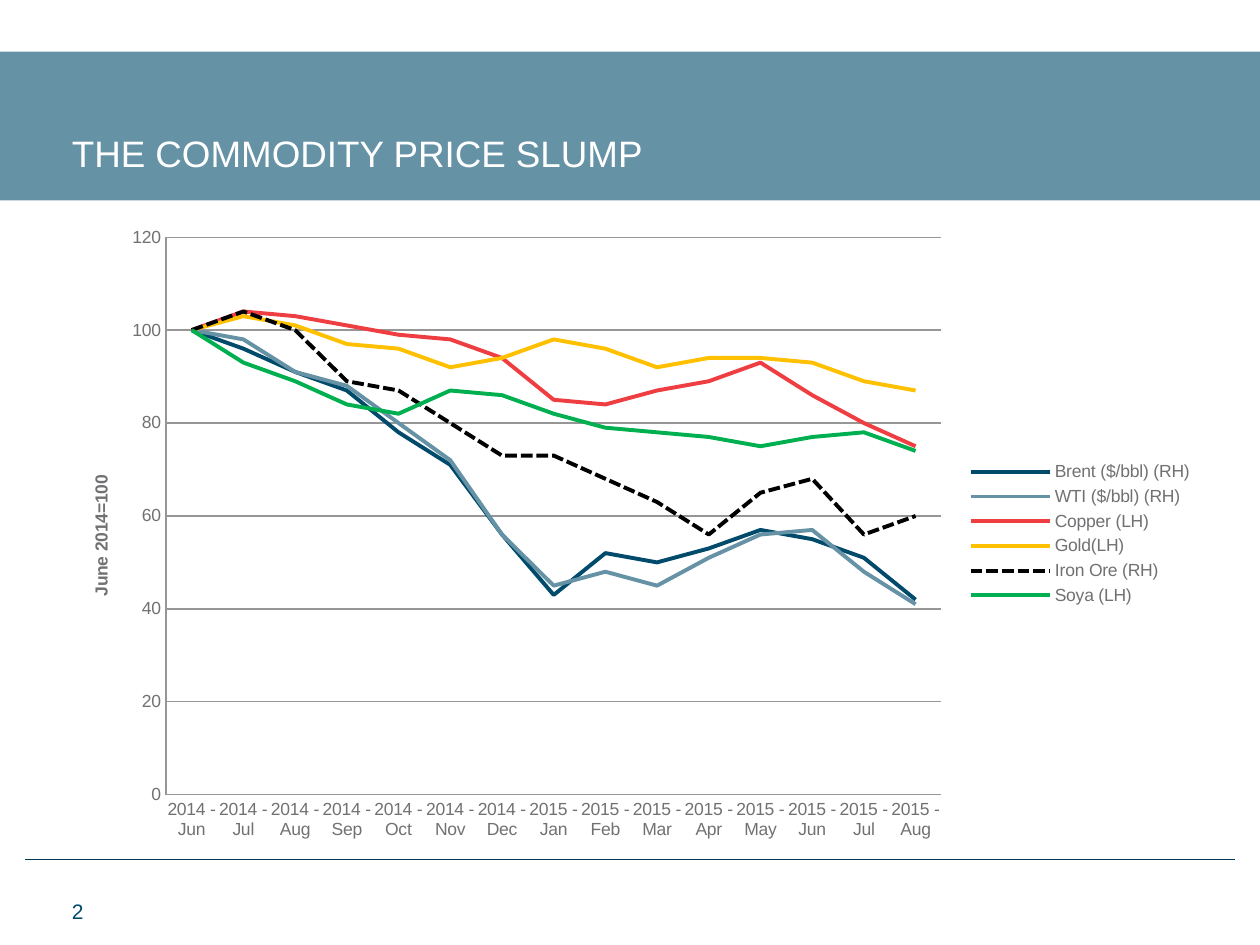
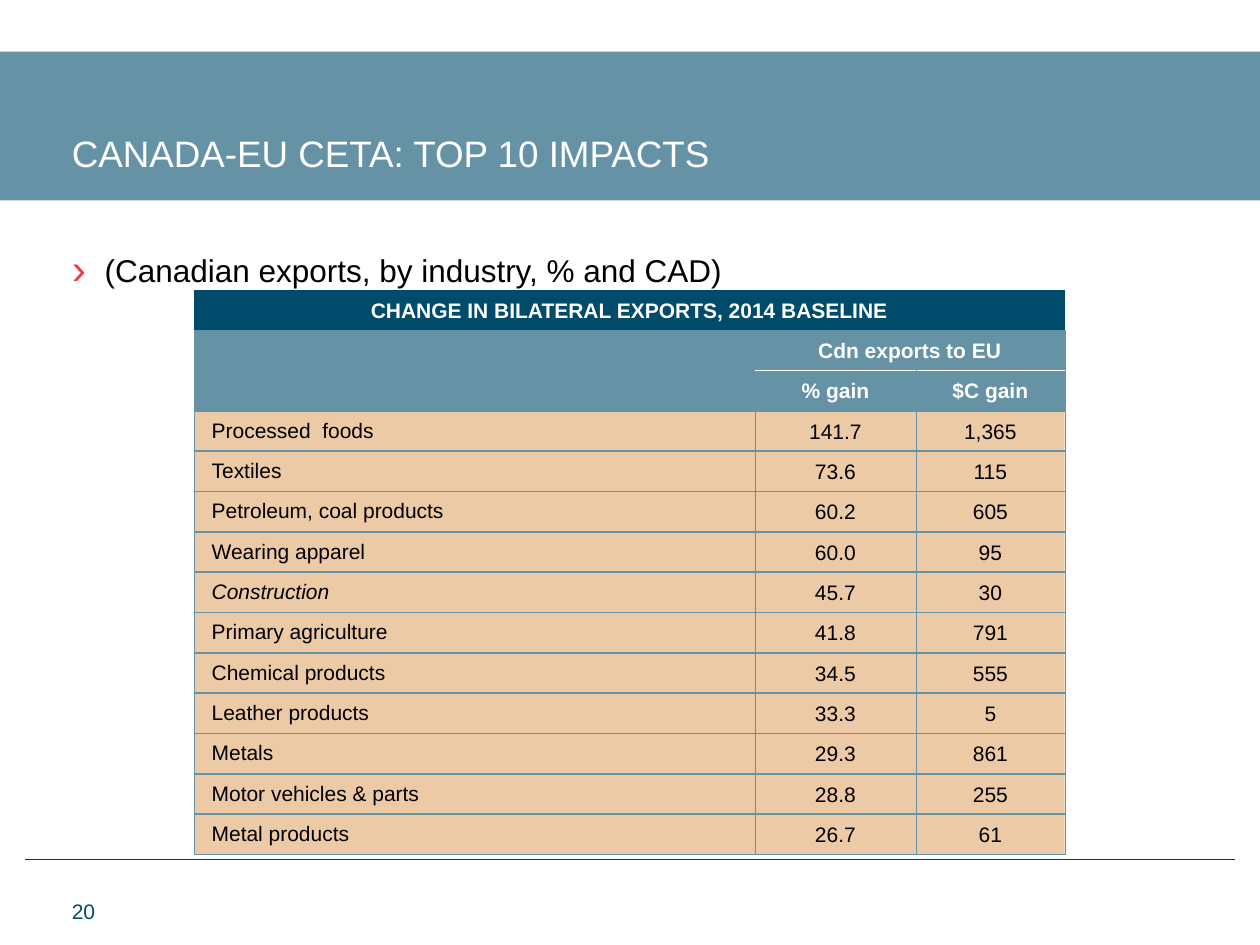
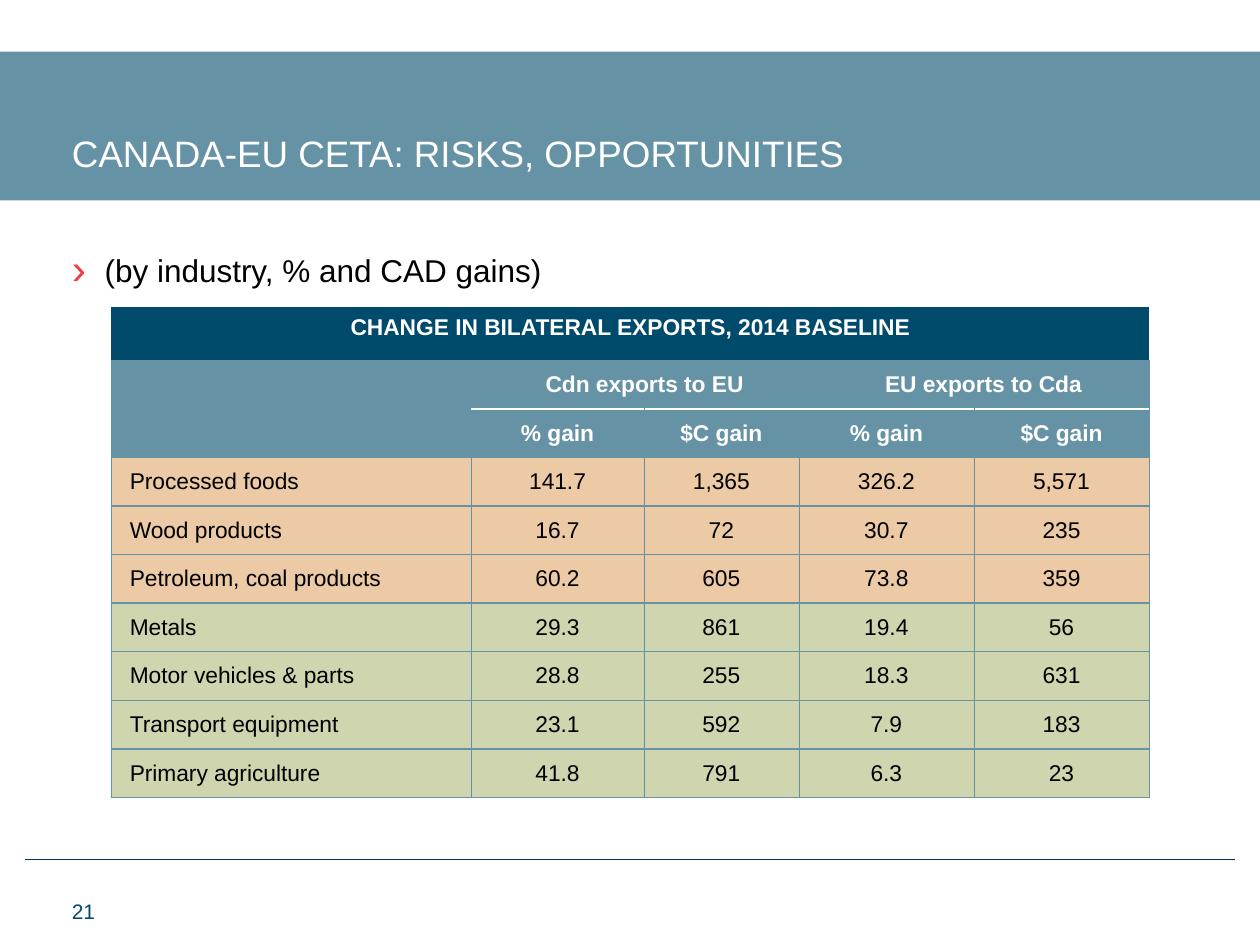
from dataclasses import dataclass

import pptx
import pptx.chart.data
import pptx.dml.color
import pptx.enum.chart
import pptx.enum.dml
import pptx.enum.shapes
import pptx.enum.text
import pptx.oxml
import pptx.oxml.ns
import pptx.util
from lxml import etree

EMU_PER_PX = 9144
TITLE_ONLY, TITLE_AND_CONTENT = 5, 1
qn = pptx.oxml.ns.qn
Anchor = pptx.enum.text.MSO_ANCHOR
Align = pptx.enum.text.PP_ALIGN


@dataclass(frozen=True)
class Theme:
    font: str = "Arial"
    navy: str = "004A6B"
    steel: str = "6692A6"
    rule: str = "003A52"
    red: str = "EF3E42"
    gold: str = "FFC000"
    green: str = "00B050"
    orange: str = "D47B22"
    olive: str = "879637"
    grey: str = "717073"
    grid: str = "969696"
    black: str = "000000"
    white: str = "FFFFFF"
    title_size: int = 21
    body_size: int = 18
    page_size: int = 12
    chart_size: int = 10


THEME = Theme()


@dataclass(frozen=True)
class Box:
    left: int
    top: int
    width: int
    height: int

    def emu(self) -> tuple:
        return tuple(px(n) for n in (self.left, self.top, self.width, self.height))


@dataclass(frozen=True)
class Series:
    name: str
    color: str
    values: tuple
    dashed: bool = False


@dataclass(frozen=True)
class Industry:
    name: str
    gains: tuple
    color: str = THEME.orange
    italic: bool = False


@dataclass(frozen=True)
class GainTable:
    box: Box
    columns: tuple
    groups: tuple
    industries: tuple
    title_height: int
    size: int
    inset: int
    group_indent: int = 0
    title_anchor: Anchor = Anchor.BOTTOM
    value_anchor: Anchor = Anchor.BOTTOM
    merge_corner: bool = False


@dataclass(frozen=True)
class CellStyle:
    fill: str
    borders: dict
    color: str = THEME.white
    bold: bool = True
    italic: bool = False
    alpha: int = 100
    align: Align = Align.CENTER
    anchor: Anchor = Anchor.MIDDLE
    indent: int = 0


BAND = Box(0, 41, 1000, 118)
TITLE = Box(57, 104, 900, 52)
BODY = Box(57, 199, 682, 48)
PAGE_NUMBER = Box(57, 703, 186, 40)
CHART = Box(45, 170, 912, 507)
RULE_LEFT, RULE_RIGHT, RULE_TOP = 20, 980, 682

SIDES = {"l": (THEME.steel, 0.25), "r": (THEME.steel, 0.25)}
GRID = {**SIDES, "t": (THEME.steel, 1), "b": (THEME.steel, 1)}
WHITE_LINE = (THEME.white, 1)

MONTHS = (
    [f"2014 - {month}" for month in "Jun Jul Aug Sep Oct Nov Dec".split()]
    + [f"2015 - {month}" for month in "Jan Feb Mar Apr May Jun Jul Aug".split()]
)
PRICES = (
    Series("Brent ($/bbl) (RH)", THEME.navy,
           (100, 96, 91, 87, 78, 71, 56, 43, 52, 50, 53, 57, 55, 51, 42)),
    Series("WTI ($/bbl) (RH)", THEME.steel,
           (100, 98, 91, 88, 80, 72, 56, 45, 48, 45, 51, 56, 57, 48, 41)),
    Series("Copper (LH)", THEME.red,
           (100, 104, 103, 101, 99, 98, 94, 85, 84, 87, 89, 93, 86, 80, 75)),
    Series("Gold(LH)", THEME.gold,
           (100, 103, 101, 97, 96, 92, 94, 98, 96, 92, 94, 94, 93, 89, 87)),
    Series("Iron Ore (RH)", THEME.black,
           (100, 104, 100, 89, 87, 80, 73, 73, 68, 63, 56, 65, 68, 56, 60), dashed=True),
    Series("Soya (LH)", THEME.green,
           (100, 93, 89, 84, 82, 87, 86, 82, 79, 78, 77, 75, 77, 78, 74)),
)
TOP_IMPACTS = GainTable(
    box=Box(154, 230, 691, 442),
    columns=(445, 128, 118),
    groups=("Cdn exports to EU",),
    industries=(
        Industry("Processed  foods", ("141.7", "1,365")),
        Industry("Textiles", ("73.6", "115")),
        Industry("Petroleum, coal products", ("60.2", "605")),
        Industry("Wearing apparel", ("60.0", "95")),
        Industry("Construction", ("45.7", "30"), italic=True),
        Industry("Primary agriculture", ("41.8", "791")),
        Industry("Chemical products", ("34.5", "555")),
        Industry("Leather products", ("33.3", "5")),
        Industry("Metals", ("29.3", "861")),
        Industry("Motor vehicles & parts", ("28.8", "255")),
        Industry("Metal products", ("26.7", "61")),
    ),
    title_height=32, size=12, inset=14, merge_corner=True,
)
RISKS = GainTable(
    box=Box(88, 244, 824, 389),
    columns=(286, 137, 123, 139, 139),
    groups=("Cdn exports to EU", "EU exports to Cda"),
    industries=(
        Industry("Processed foods", ("141.7", "1,365", "326.2", "5,571")),
        Industry("Wood products", ("16.7", "72", "30.7", "235")),
        Industry("Petroleum, coal products", ("60.2", "605", "73.8", "359")),
        Industry("Metals", ("29.3", "861", "19.4", "56"), THEME.olive),
        Industry("Motor vehicles & parts", ("28.8", "255", "18.3", "631"), THEME.olive),
        Industry("Transport equipment", ("23.1", "592", "7.9", "183"), THEME.olive),
        Industry("Primary agriculture", ("41.8", "791", "6.3", "23"), THEME.olive),
    ),
    title_height=42, size=13, inset=15, group_indent=15,
    title_anchor=Anchor.TOP, value_anchor=Anchor.MIDDLE,
)


def px(length: float) -> pptx.util.Emu:
    return pptx.util.Emu(round(length * EMU_PER_PX))


def rgb(color: str) -> pptx.dml.color.RGBColor:
    return pptx.dml.color.RGBColor.from_string(color)


def set_font(font, size: int, color: str, bold: bool = False, italic: bool = False) -> None:
    font.name, font.size = THEME.font, pptx.util.Pt(size)
    font.color.rgb = rgb(color)
    font.bold, font.italic = bold, italic


def set_line(line, color: str, width: float) -> None:
    line.color.rgb = rgb(color)
    line.width = pptx.util.Pt(width)


def furnish_master(deck) -> None:
    """Put the title band and the footer rule on the master, behind its placeholders."""
    shapes = deck.slides[0].shapes
    band = shapes.add_shape(pptx.enum.shapes.MSO_SHAPE.RECTANGLE, *BAND.emu())
    band.shadow.inherit = False
    band.fill.solid()
    band.fill.fore_color.rgb = rgb(THEME.steel)
    band.line.fill.background()

    rule = shapes.add_connector(pptx.enum.shapes.MSO_CONNECTOR.STRAIGHT,
                                px(RULE_LEFT), px(RULE_TOP), px(RULE_RIGHT), px(RULE_TOP))
    set_line(rule.line, THEME.rule, 0.5)
    etree.SubElement(rule.element.spPr, qn("a:effectLst"))

    tree = deck.slide_master.shapes.element
    for offset, shape in enumerate((band, rule)):
        shape.element.xpath("./*/p:cNvPr")[0].set("id", str(100 + offset))
        tree.insert(2 + offset, shape.element)


def place_text(shape, box: Box, text: str):
    """Move a placeholder, strip its insets and return its one paragraph."""
    shape.left, shape.top, shape.width, shape.height = box.emu()
    frame = shape.text_frame
    frame.margin_left = frame.margin_right = frame.margin_top = frame.margin_bottom = 0
    frame.vertical_anchor = Anchor.TOP
    frame.auto_size = pptx.enum.text.MSO_AUTO_SIZE.NONE
    frame.word_wrap = True
    para = frame.paragraphs[0]
    para.text = text
    para.alignment = Align.LEFT
    para.space_before = pptx.util.Pt(0)
    return para


def add_page(deck, layout: int, title: str, number: int):
    page = deck.slides.add_slide(deck.slide_layouts[layout])
    para = place_text(page.shapes.title, TITLE, title)
    set_font(para.font, THEME.title_size, THEME.white)

    frame = page.shapes.add_textbox(*PAGE_NUMBER.emu()).text_frame
    frame.word_wrap = True
    frame.margin_left = 0
    frame.vertical_anchor = Anchor.MIDDLE
    frame.text = str(number)
    set_font(frame.paragraphs[0].font, THEME.page_size, THEME.navy)
    return page


def fill_body(page, text: str) -> None:
    para = place_text(page.placeholders[1], BODY, text)
    properties = para._p.get_or_add_pPr()
    properties.set("marL", str(px(26)))
    properties.set("indent", str(px(-26)))
    color = etree.SubElement(properties, qn("a:buClr"))
    etree.SubElement(color, qn("a:srgbClr"), val=THEME.red)
    etree.SubElement(properties, qn("a:buSzPct"), val="135000")
    etree.SubElement(properties, qn("a:buChar"), char="›")
    para.space_after = pptx.util.Pt(9)
    set_font(para.font, THEME.body_size, THEME.black)


def set_layout(parent, index: int, **parts) -> None:
    """Give a chart part a manual layout, as fractions of the chart, at a child index."""
    for old in parent.findall(qn("c:layout")):
        parent.remove(old)
    layout = etree.Element(qn("c:layout"))
    manual = etree.SubElement(layout, qn("c:manualLayout"))
    for name, value in parts.items():
        etree.SubElement(manual, qn(f"c:{name}"), val=str(value))
    parent.insert(index, layout)


def add_price_chart(page) -> None:
    data = pptx.chart.data.CategoryChartData()
    data.categories = MONTHS
    for price in PRICES:
        data.add_series(price.name, price.values)
    chart = page.shapes.add_chart(
        pptx.enum.chart.XL_CHART_TYPE.LINE, *CHART.emu(), data).chart
    set_font(chart.font, THEME.chart_size, THEME.grey)
    chart.has_title = False
    chart.has_legend = True
    chart.legend.position = pptx.enum.chart.XL_LEGEND_POSITION.RIGHT
    chart.legend.include_in_layout = False

    chart.plots[0].vary_by_categories = False
    for series, price in zip(chart.plots[0].series, PRICES):
        series.smooth = False
        series.marker.style = pptx.enum.chart.XL_MARKER_STYLE.NONE
        set_line(series.format.line, price.color, 2.25)
        if price.dashed:
            series.format.line.dash_style = pptx.enum.dml.MSO_LINE.SQUARE_DOT

    values = chart.value_axis
    values.minimum_scale, values.maximum_scale, values.major_unit = 0, 120, 20
    values.has_major_gridlines = True
    set_line(values.major_gridlines.format.line, THEME.grid, 0.75)
    for axis in (values, chart.category_axis):
        axis.major_tick_mark = pptx.enum.chart.XL_TICK_MARK.NONE
        set_line(axis.format.line, THEME.grid, 0.75)
    para = values.axis_title.text_frame.paragraphs[0]
    para.text = "June 2014=100"
    set_font(para.font, THEME.chart_size, THEME.grey, bold=True)

    set_layout(chart.element.xpath(".//c:plotArea")[0], 0, layoutTarget="inner",
               xMode="edge", yMode="edge", x=0.095, y=0.036, w=0.675, h=0.873)
    set_layout(chart.element.xpath(".//c:valAx/c:title")[0], 1,
               xMode="edge", yMode="edge", x=0.026, y=0.404)


def set_borders(cell, borders: dict) -> None:
    """Draw the named sides (l, r, t, b) and clear the others."""
    properties = cell._tc.get_or_add_tcPr()
    for side in "lrtb":
        line = etree.SubElement(properties, qn(f"a:ln{side.upper()}"))
        if side in borders:
            color, width = borders[side]
            line.set("w", str(pptx.util.Pt(width)))
            fill = etree.SubElement(line, qn("a:solidFill"))
            etree.SubElement(fill, qn("a:srgbClr"), val=color)
        else:
            etree.SubElement(line, qn("a:noFill"))


def fill_cell(cell, text: str, style: CellStyle, size: int, inset: int) -> None:
    set_borders(cell, style.borders)
    cell.fill.solid()
    cell.fill.fore_color.rgb = rgb(style.fill)
    if style.alpha < 100:
        color = cell._tc.tcPr.find(qn("a:solidFill"))[0]
        etree.SubElement(color, qn("a:alpha"), val=str(style.alpha * 1000))
    cell.margin_left, cell.margin_right = px(inset + style.indent), px(inset)
    cell.margin_top = cell.margin_bottom = px(6)
    cell.vertical_anchor = style.anchor
    para = cell.text_frame.paragraphs[0]
    para.alignment = style.align
    set_font(para.font, size, style.color, style.bold, style.italic)
    if text:
        para.text = text
    else:
        etree.SubElement(para._p, qn("a:endParaRPr"), sz=str(size * 100))


def table_rows(spec: GainTable) -> list:
    """List each row's (text, style) pairs from the heading down."""
    count = len(spec.columns)
    title = CellStyle(THEME.navy, {}, anchor=spec.title_anchor)
    corner = CellStyle(THEME.steel, {})
    group = CellStyle(THEME.steel, {**SIDES, "b": WHITE_LINE},
                      anchor=spec.value_anchor, indent=spec.group_indent)
    unit = CellStyle(THEME.steel, {**SIDES, "t": WHITE_LINE}, anchor=spec.value_anchor)
    rows = [
        [("CHANGE IN BILATERAL EXPORTS, 2014 BASELINE", title)] + [("", title)] * (count - 1),
        [("", corner)] + [(text, group) for name in spec.groups for text in (name, "")],
        [("", corner)] + [("% gain", unit), ("$C gain", unit)] * len(spec.groups),
    ]
    for industry in spec.industries:
        label = CellStyle(industry.color, GRID, THEME.black, bold=False,
                          italic=industry.italic, alpha=40, align=Align.LEFT)
        value = CellStyle(industry.color, GRID, THEME.black, bold=False,
                          alpha=40, anchor=spec.value_anchor)
        rows.append([(industry.name, label)] + [(gain, value) for gain in industry.gains])
    return rows


def add_gain_table(page, spec: GainTable) -> None:
    rows = table_rows(spec)
    table = page.shapes.add_table(len(rows), len(spec.columns), *spec.box.emu()).table
    table.first_row = table.horz_banding = False
    for column, width in zip(table.columns, spec.columns):
        column.width = px(width)
    row_height = (spec.box.height - spec.title_height) / (len(rows) - 1)
    for index, cells in enumerate(rows):
        table.rows[index].height = px(row_height if index else spec.title_height)
        for column, (text, style) in enumerate(cells):
            fill_cell(table.cell(index, column), text, style, spec.size, spec.inset)

    table.cell(0, 0).merge(table.cell(0, len(spec.columns) - 1))
    for column in range(1, len(spec.columns), 2):
        table.cell(1, column).merge(table.cell(1, column + 1))
    if spec.merge_corner:
        table.cell(1, 0).merge(table.cell(2, 0))


def main() -> None:
    deck = pptx.Presentation()
    deck.slide_width, deck.slide_height = px(1000), px(750)

    page = add_page(deck, TITLE_ONLY, "THE COMMODITY PRICE SLUMP", 2)
    furnish_master(deck)
    add_price_chart(page)

    page = add_page(deck, TITLE_AND_CONTENT, "CANADA-EU CETA: TOP 10 IMPACTS", 20)
    fill_body(page, "(Canadian exports, by industry, % and CAD)")
    add_gain_table(page, TOP_IMPACTS)

    page = add_page(deck, TITLE_AND_CONTENT, "CANADA-EU CETA: RISKS, OPPORTUNITIES", 21)
    fill_body(page, "(by industry, % and CAD gains)")
    add_gain_table(page, RISKS)

    deck.save("out.pptx")


if __name__ == "__main__":
    main()
